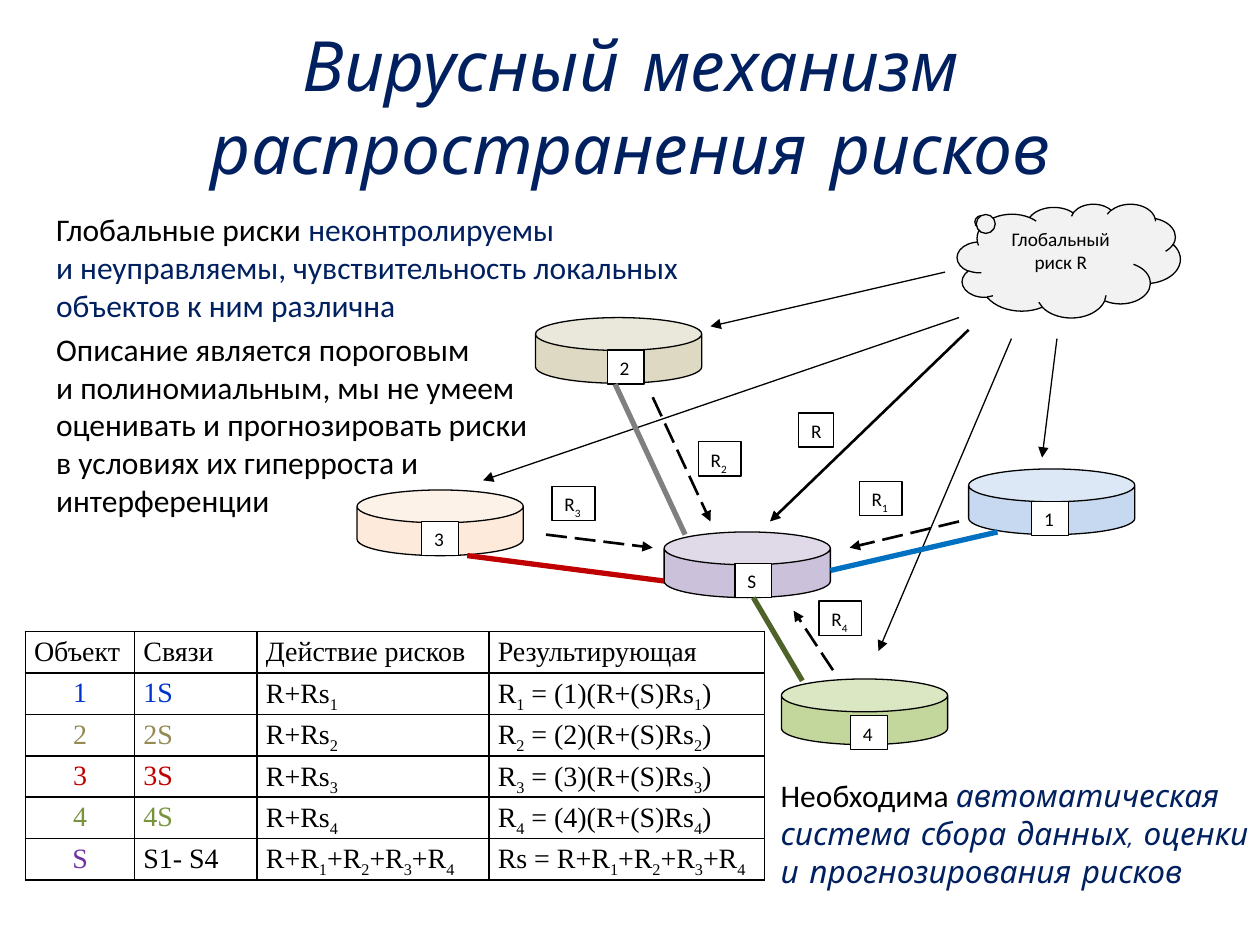
from pptx import Presentation
from pptx.dml.color import RGBColor
from pptx.enum.dml import MSO_LINE_DASH_STYLE as Dash
from pptx.enum.shapes import MSO_CONNECTOR, MSO_SHAPE as Shape
from pptx.enum.text import MSO_ANCHOR as Anchor, PP_ALIGN as Align
from pptx.oxml.ns import qn
from pptx.util import Pt
from lxml.etree import SubElement

BLACK, WHITE, NAVY = "000000", "FFFFFF", "002060"


def rgb(value):
    return RGBColor.from_string(value)


def write(frame, text, align=Align.LEFT, spacing=None, anchor=Anchor.TOP,
          wrap=True, base=-30, **style):
    """Lines are strings or lists of (text, style) runs; _x sets x as a subscript."""
    frame.word_wrap, frame.vertical_anchor = wrap, anchor
    for i, line in enumerate([text] if isinstance(text, str) else text):
        para = frame.add_paragraph() if i else frame.paragraphs[0]
        para.alignment = align
        if spacing:
            para.line_spacing = spacing
        for part, changes in [(line, {})] if isinstance(line, str) else line:
            look = {"size": 18, "font": "Calibri", "color": BLACK, "italic": False,
                    **style, **changes}
            first, *rest = part.split("_")
            pieces = [(first, False)]
            for piece in rest:
                pieces += [(piece[0], True), (piece[1:], False)]
            for words, lowered in pieces:
                if not words:
                    continue
                run = para.add_run()
                run.text = words
                run.font.size, run.font.name = Pt(look["size"]), look["font"]
                run.font.italic = look["italic"]
                run.font.color.rgb = rgb(look["color"])
                if lowered:
                    run.font._element.set("baseline", str(base * 1000))


def add_figure(slide, kind, x, y, w, h, fill, adjustments=()):
    figure = slide.shapes.add_shape(kind, Pt(x), Pt(y), Pt(w), Pt(h))
    figure.shadow.inherit = False
    figure.fill.solid()
    figure.fill.fore_color.rgb = rgb(fill)
    figure.line.color.rgb = rgb(BLACK)
    figure.line.width = Pt(0.75)
    for i, value in enumerate(adjustments):
        figure.adjustments[i] = value
    return figure


def add_tag(slide, x, y, text, w=21):
    tag = add_figure(slide, Shape.RECTANGLE, x, y, w, 19.5, WHITE)
    write(tag.text_frame, text, size=11, wrap=False)
    return tag


def add_line(slide, x1, y1, x2, y2, color=BLACK, width=0.75, dashed=False, arrow=True):
    line = slide.shapes.add_connector(MSO_CONNECTOR.STRAIGHT, Pt(x1), Pt(y1), Pt(x2), Pt(y2))
    line.line.color.rgb = rgb(color)
    line.line.width = Pt(width)
    if dashed:
        line.line.dash_style = Dash.LONG_DASH
    if arrow:
        SubElement(line.line._get_or_add_ln(), qn("a:tailEnd"), type="triangle")
    SubElement(line._element.spPr, qn("a:effectLst"))
    return line


def add_title(slide, x, y, w, h):
    title = slide.shapes.title
    title.left, title.top, title.width, title.height = Pt(x), Pt(y), Pt(w), Pt(h)
    write(title.text_frame, "Вирусный механизм распространения рисков", align=Align.CENTER,
          anchor=Anchor.MIDDLE, size=39.6, font="Comic Neue", color=NAVY, italic=True)


def add_note(slide, x, y, w, h, lines, wrap=False):
    note = slide.shapes.add_textbox(Pt(x), Pt(y), Pt(w), Pt(h))
    write(note.text_frame, lines, wrap=wrap)


def add_diagram(slide, x, y):
    # Global risk
    cloud = add_figure(slide, Shape.CLOUD_CALLOUT, x + 347, y + 6.5, 127.5, 65, "F2F2F2",
                       (-0.387, -0.337))
    write(cloud.text_frame, "Глобальный риск R", align=Align.CENTER, size=11)

    # Arrows of the global risk, then of the local risks
    thin, bold, dashed = {}, {"width": 1.5}, {"width": 1.5, "dashed": True}
    for x1, y1, x2, y2, look in (
            (340, 45.5, 206, 76.5, thin), (404, 83.5, 395.5, 151.5, thin),
            (353.5, 78.5, 240, 188, bold), (348, 71.5, 76, 164.5, thin),
            (378, 83.5, 302, 262, thin),
            (348, 188, 285.5, 203, dashed), (173, 117, 206, 188, dashed),
            (112, 195.5, 173, 203, dashed), (276, 273, 253.5, 239, dashed)):
        add_line(slide, x + x1, y + y1, x + x2, y + y2, **look)

    # Objects, each with its name tag
    tags = {}
    for name, left, top, fill, tag_dx, tag_dy in (
            ("1", 353.5, 158, "C6D9F1", 36, 18.5), ("2", 106, 71.5, "DDD9C3", 41, 18.5),
            ("4", 246.5, 278, "C3D69B", 39.5, 21), ("S", 179.5, 194, "CCC1DA", 40.5, 18),
            ("3", 4, 170, "FDEADA", 37, 18)):
        add_figure(slide, Shape.CAN, x + left, y + top, 95, 37.5, fill, (0.5,))
        tags[name] = add_tag(slide, x + left + tag_dx, y + top + tag_dy, name)

    # Risk labels
    for name, left, top, width in (
            ("R", 256.5, 126, 20), ("R_1", 291, 165, 24.5), ("R_2", 199, 142.5, 24.5),
            ("R_3", 115.5, 168, 24.5), ("R_4", 268, 233.5, 24.5)):
        add_tag(slide, x + left, y + top, name, width)

    # Links between the objects and S
    for x1, y1, x2, y2, color in (
            (151.5, 109.5, 191.5, 195.5, "808080"), (67, 207.5, 179.5, 222, "C00000"),
            (274.5, 216, 370, 194, "0070C0"), (230.5, 231.5, 258.5, 279, "4F6228")):
        link = add_line(slide, x + x1, y + y1, x + x2, y + y2, color, 3, arrow=False)
    link.begin_connect(tags["S"], 2)


def add_border(cell):
    props = cell._tc.get_or_add_tcPr()
    for i, side in enumerate(("lnL", "lnR", "lnT", "lnB")):
        border = props.makeelement(qn(f"a:{side}"), {"w": str(Pt(1))})
        fill = SubElement(border, qn("a:solidFill"))
        SubElement(fill, qn("a:srgbClr"), val=BLACK)
        props.insert(i, border)


def add_risk_table(slide, x, y, w, h):
    total = "R+R_1+R_2+R_3+R_4"
    colors = {"1": "0033CC", "2": "948A54", "3": "C00000", "4": "77933C", "S": "7030A0"}
    rows = [("Объект", "Связи", "Действие рисков", "Результирующая")]
    rows += [(n, f"{n}S", f"R+Rs_{n}", f"R_{n} = ({n})(R+(S)Rs_{n})") for n in "1234"]
    rows.append(("S", "S1- S4", total, f"Rs = {total}"))

    table = slide.shapes.add_table(len(rows), 4, Pt(x), Pt(y), Pt(w), Pt(h)).table
    for column, width in zip(table.columns, (62.5, 70, 132.5, 157.5)):
        column.width = Pt(width)
    for r, row in enumerate(rows):
        table.rows[r].height = Pt(h / len(rows))
        for c, text in enumerate(row):
            cell = table.cell(r, c)
            cell.fill.solid()
            cell.fill.fore_color.rgb = rgb(WHITE)
            cell.margin_left = cell.margin_right = Pt(5)
            cell.margin_top = cell.margin_bottom = 0
            colored = c == 0 or (c == 1 and row[0] != "S")
            write(cell.text_frame, text, size=16, font="Times New Roman", spacing=1.15, base=-25,
                  align=Align.CENTER if r and c == 0 else Align.JUSTIFY,
                  color=colors.get(row[0], BLACK) if colored else BLACK)
            add_border(cell)


def main():
    deck = Presentation()
    deck.slide_width, deck.slide_height = Pt(720), Pt(540)
    slide = deck.slides.add_slide(deck.slide_layouts[5])
    navy = {"color": NAVY}
    accent = {"color": NAVY, "font": "Comic Neue", "italic": True}

    add_title(slide, 36.5, 15, 648, 90)
    add_diagram(slide, 200, 110)
    add_risk_table(slide, 14.5, 361, 422.5, 142)
    add_note(slide, 25, 116.5, 374, 72.5, [
        [("Глобальные риски ", {}), ("неконтролируемы", navy)],
        [("и неуправляемы, чувствительность локальных", navy)],
        [("объектов к ним различна", navy)]])
    add_note(slide, 25, 185, 291.5, 116.5, [
        "Описание является пороговым",
        "и полиномиальным, мы не умеем",
        "оценивать и прогнозировать риски",
        "в условиях их гиперроста и интерференции"], wrap=True)
    add_note(slide, 439, 440, 290, 72.5, [
        [("Необходима ", {}), ("автоматическая", accent)],
        [("система сбора данных, оценки", accent)],
        [("и прогнозирования рисков", accent)]])
    deck.save("out.pptx")


if __name__ == "__main__":
    main()
